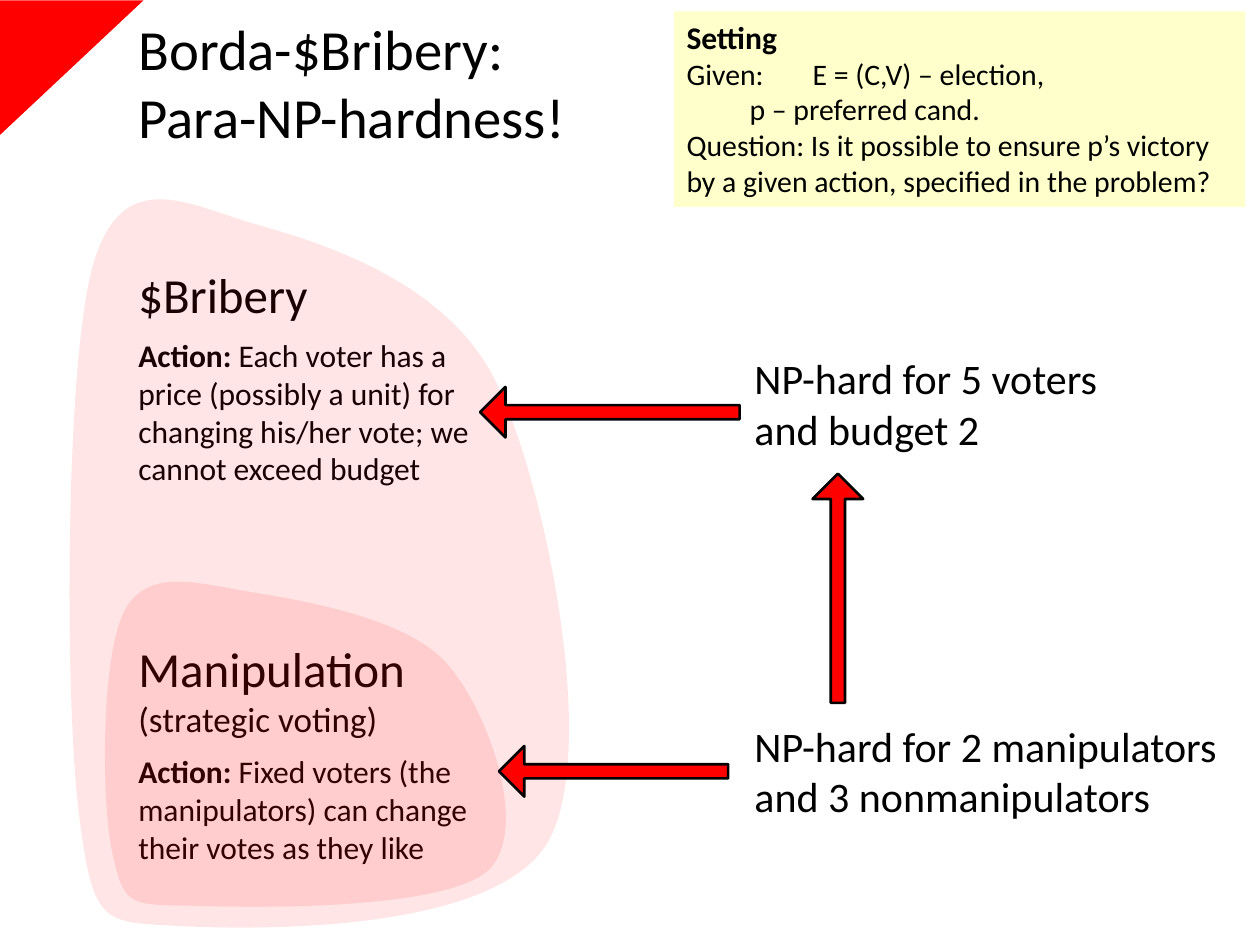
from lxml.etree import SubElement
from pptx import Presentation
from pptx.dml.color import RGBColor
from pptx.enum.shapes import MSO_SHAPE
from pptx.enum.text import MSO_ANCHOR, PP_ALIGN
from pptx.oxml.ns import qn
from pptx.util import Cm, Pt


def rgb(value):
    return RGBColor.from_string(value)


def add_text(paragraphs, box, fill=None, anchor=MSO_ANCHOR.TOP):
    box = [Cm(v) for v in box]
    if fill:
        sp = s.shapes.add_shape(MSO_SHAPE.RECTANGLE, *box)
        sp.shadow.inherit = False
        sp.fill.solid()
        sp.fill.fore_color.rgb = rgb(fill)
        sp.line.fill.background()
    else:
        sp = s.shapes.add_textbox(*box)
    tf = sp.text_frame
    tf.word_wrap = True
    tf.vertical_anchor = anchor
    for i, runs in enumerate(paragraphs):
        p = tf.add_paragraph() if i else tf.paragraphs[0]
        p.alignment = PP_ALIGN.LEFT
        for text, size, bold in runs:
            for j, line in enumerate(text.split("\n")):
                if j:
                    p.add_line_break()
                r = p.add_run()
                r.text = line
                r.font.name = "Calibri"
                r.font.size = Pt(size)
                r.font.bold = bold
                r.font.color.rgb = rgb("000000")


prs = Presentation()
prs.slide_width, prs.slide_height = Cm(25.4), Cm(19.05)
s = prs.slides.add_slide(prs.slide_layouts[6])

sp = s.shapes.add_shape(MSO_SHAPE.RIGHT_TRIANGLE, Cm(0.08), Cm(-0.08), Cm(2.72), Cm(2.9))
sp.rotation = 90
sp.shadow.inherit = False
sp.fill.solid()
sp.fill.fore_color.rgb = rgb("FF0000")
sp.line.fill.background()

add_text([[("Borda-$Bribery:\nPara-NP-hardness!", 32.4, False)]],
         (2.54, 0, 11.35, 3.3), anchor=MSO_ANCHOR.MIDDLE)
add_text([[("Manipulation", 28, False)], [("(strategic voting)", 20, False)]],
         (2.54, 12.75, 6.27, 2.31))
add_text([[("Setting", 18, True)],
          [("Given: \tE = (C,V) – election, \n\tp – preferred cand.", 17, False)],
          [("Question: Is it possible to ensure p’s victory by a given action, "
            "specified in the problem?", 17, False)]],
         (13.59, 0.23, 11.51, 3.94), fill="FFFFCC")
add_text([[("$Bribery", 28, False)]], (2.54, 5.21, 6.27, 1.45))

actions = [
    ("Fixed voters (the manipulators) can change their votes as they like", 15.04, 2.57),
    ("Each voter has a price (possibly a unit) for changing his/her vote; "
     "we cannot exceed budget", 6.65, 3.33),
]
for text, top, height in actions:
    add_text([[("Action: ", 18, True), (text, 18, False)]],
             (2.54, top, 7.52, height), fill="FFFFFF")

results = [
    ("NP-hard for 2 manipulators and 3 nonmanipulators", 14.4, 10.16),
    ("NP-hard for 5 voters and budget 2", 6.99, 7.72),
]
for text, top, width in results:
    add_text([[(text, 24, False)]], (14.96, top, width, 2.31))

blobs = [
    ((2.11, 11.73, 8.08, 6.55), (5.08, 11.94), [
        [(3.99, 11.76), (2.97, 11.43), (2.51, 12.32)],
        [(2.03, 13.21), (2.03, 16.31), (2.29, 17.3)],
        [(2.51, 18.29), (2.67, 18.24), (3.94, 18.26)],
        [(5.21, 18.31), (9.02, 18.34), (9.86, 17.53)],
        [(10.69, 16.69), (9.83, 14.3), (9.02, 13.39)],
        [(8.23, 12.47), (6.17, 12.12), (5.08, 11.94)]]),
    ((1.4, 4.01, 10.08, 14.68), (5.08, 4.5), [
        [(3.73, 4.09), (2.46, 3.35), (1.88, 5.33)],
        [(1.3, 7.34), (1.3, 14.22), (1.6, 16.46)],
        [(1.88, 18.67), (2.08, 18.59), (3.66, 18.67)],
        [(5.23, 18.75), (9.98, 18.8), (11.05, 16.97)],
        [(12.09, 15.14), (11, 9.78), (10.01, 7.72)],
        [(9.02, 5.66), (6.45, 4.88), (5.08, 4.5)]]),
]
for (x, y, w, h), start, curves in blobs:
    fb = s.shapes.build_freeform(Cm(x), Cm(y))
    fb.add_line_segments([(Cm(x + w), Cm(y)), (Cm(x + w), Cm(y + h)), (Cm(x), Cm(y + h))])
    sp = fb.convert_to_shape()
    sp.shadow.inherit = False
    sp.fill.solid()
    sp.fill.fore_color.rgb = rgb("FF0000")
    sp.line.fill.background()
    color = sp.element.spPr.find(qn("a:solidFill"))[0]
    SubElement(color, qn("a:alpha"), val="10000")
    outline = next(sp.element.iter(qn("a:path")))
    for child in list(outline):
        outline.remove(child)
    for tag, points in [("a:moveTo", [start])] + [("a:cubicBezTo", c) for c in curves]:
        segment = SubElement(outline, qn(tag))
        for px, py in points:
            SubElement(segment, qn("a:pt"), x=str(Cm(px - x)), y=str(Cm(py - y)))
    SubElement(outline, qn("a:close"))

arrows = [(10.06, 15.04, 4.62, 0), (14.58, 11.35, 4.62, 90), (9.68, 7.8, 5.23, 0)]
for left, top, width, rotation in arrows:
    sp = s.shapes.add_shape(MSO_SHAPE.LEFT_ARROW, Cm(left), Cm(top), Cm(width), Cm(1.02))
    sp.rotation = rotation
    sp.adjustments[0] = 0.28
    sp.adjustments[1] = 0.5
    sp.shadow.inherit = False
    sp.fill.solid()
    sp.fill.fore_color.rgb = rgb("FF0000")
    sp.line.color.rgb = rgb("000000")
    sp.line.width = Pt(1.5)

prs.save("out.pptx")
